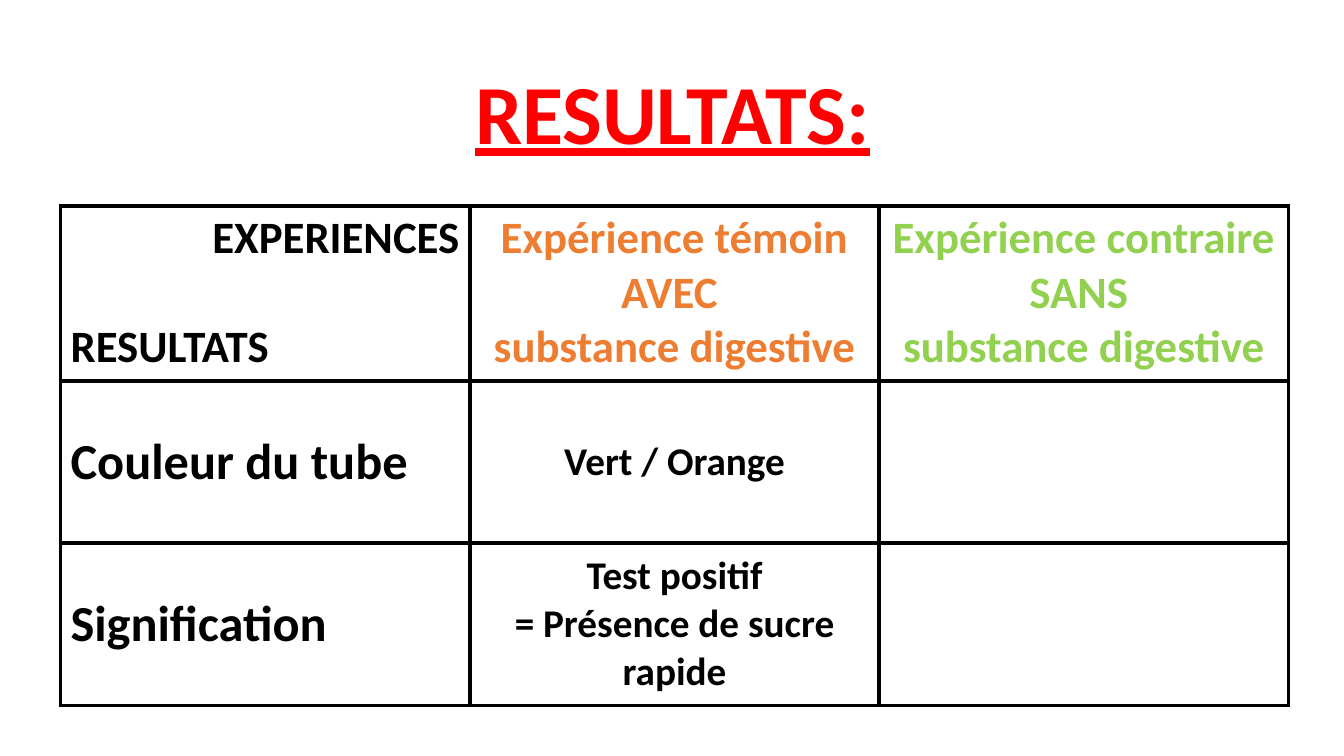
from lxml.etree import SubElement
from pptx import Presentation
from pptx.dml.color import RGBColor
from pptx.enum.text import MSO_ANCHOR, PP_ALIGN
from pptx.oxml.ns import qn
from pptx.util import Inches, Pt

BLACK = RGBColor(0x00, 0x00, 0x00)
RED = RGBColor(0xFF, 0x00, 0x00)
ORANGE = RGBColor(0xED, 0x7D, 0x31)
GREEN = RGBColor(0x92, 0xD0, 0x50)

LEFT, CENTER, RIGHT = PP_ALIGN.LEFT, PP_ALIGN.CENTER, PP_ALIGN.RIGHT
TOP, MIDDLE = MSO_ANCHOR.TOP, MSO_ANCHOR.MIDDLE

TITLE = "RESULTATS:"
ROWS = [
    [
        (["EXPERIENCES", "RESULTATS"], 32, BLACK, [RIGHT, LEFT], TOP),
        (["Expérience témoin", "AVEC ", "substance digestive"], 32, ORANGE, [CENTER] * 3, TOP),
        (["Expérience contraire", "SANS ", "substance digestive"], 32, GREEN, [CENTER] * 3, TOP),
    ],
    [
        (["Couleur du tube"], 36, BLACK, [LEFT], MIDDLE),
        (["Vert / Orange"], 28, BLACK, [CENTER], MIDDLE),
        None,
    ],
    [
        (["Signification"], 36, BLACK, [LEFT], MIDDLE),
        (["Test positif", "= Présence de sucre rapide"], 28, BLACK, [CENTER] * 2, MIDDLE),
        None,
    ],
]
COLUMN_WIDTH = 4.06
ROW_HEIGHTS = [1.74, 1.61, 1.61]
HEADING_GAP = Pt(39)
BORDER_WIDTH = Pt(3)


def format_font(paragraph, size, color):
    font = paragraph.font
    font.name = "Calibri"
    font.size = Pt(size)
    font.bold = True
    font.color.rgb = color


def add_borders(cell):
    properties = cell._tc.get_or_add_tcPr()
    for side in ("a:lnL", "a:lnR", "a:lnT", "a:lnB"):
        line = SubElement(properties, qn(side), w=str(BORDER_WIDTH))
        fill = SubElement(line, qn("a:solidFill"))
        SubElement(fill, qn("a:srgbClr"), val=str(BLACK))


def write_cell(cell, lines, size, color, alignments, anchor):
    cell.vertical_anchor = anchor
    cell.text = "\n".join(lines)
    for paragraph, alignment in zip(cell.text_frame.paragraphs, alignments):
        paragraph.alignment = alignment
        format_font(paragraph, size, color)


def add_title(page):
    title = page.shapes.title
    title.left, title.top = Inches(1.67), Inches(0.62)
    title.width, title.height = Inches(10), Inches(1.04)
    title.text_frame.text = TITLE
    title.text_frame.vertical_anchor = MSO_ANCHOR.BOTTOM
    paragraph = title.text_frame.paragraphs[0]
    paragraph.alignment = CENTER
    paragraph.line_spacing = 0.9
    format_font(paragraph, 60, RED)
    paragraph.font.underline = True


def add_results(page):
    column_count = len(ROWS[0])
    table = page.shapes.add_table(
        len(ROWS), column_count, Inches(0.6), Inches(2.04),
        Inches(COLUMN_WIDTH * column_count), Inches(sum(ROW_HEIGHTS)),
    ).table
    table.first_row = False
    table.horz_banding = False
    for column in table.columns:
        column.width = Inches(COLUMN_WIDTH)
    for row, height, contents in zip(table.rows, ROW_HEIGHTS, ROWS):
        row.height = Inches(height)
        for cell, content in zip(row.cells, contents):
            add_borders(cell)
            cell.fill.background()
            if content:
                write_cell(cell, *content)
    table.cell(0, 0).text_frame.paragraphs[1].space_before = HEADING_GAP


def main():
    deck = Presentation()
    deck.slide_width, deck.slide_height = Inches(13.33), Inches(7.5)
    page = deck.slides.add_slide(deck.slide_layouts[5])
    add_title(page)
    add_results(page)
    deck.save("out.pptx")


if __name__ == "__main__":
    main()
